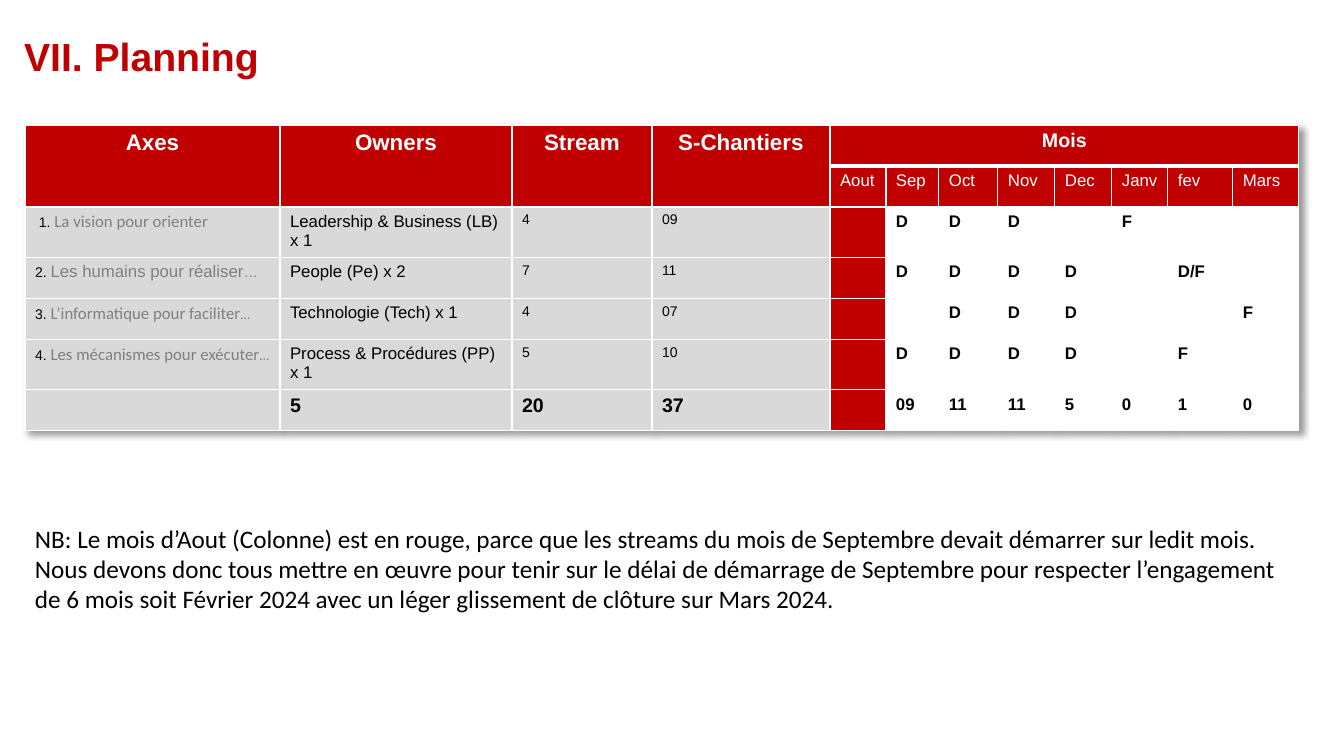
from lxml import etree
from pptx import Presentation
from pptx.dml.color import RGBColor
from pptx.enum.text import MSO_ANCHOR, MSO_AUTO_SIZE, PP_ALIGN
from pptx.oxml.ns import qn
from pptx.util import Emu, Pt

CENTER, LEFT = PP_ALIGN.CENTER, PP_ALIGN.LEFT
MIDDLE = MSO_ANCHOR.MIDDLE
GROW = MSO_AUTO_SIZE.SHAPE_TO_FIT_TEXT
EMU_PER_INCH, PX_PER_INCH = 914400, 100.8
RED, GRAY, WHITE, BLACK, MUTED = "C00000", "D9D9D9", "FFFFFF", "000000", "808080"

COLUMN_WIDTHS = [255, 232, 140, 178, 56, 53, 59, 57, 57, 56, 65, 66]
ROW_HEIGHT, ROW_COUNT = 41, 7
HEADINGS = ["Axes", "Owners", "Stream", "S-Chantiers"]
MONTHS = ["Aout", "Sep", "Oct", "Nov", "Dec", "Janv", "fev", "Mars"]
FIRST_MONTH = len(HEADINGS)
AXES = [
    (" 1. ", "La vision pour orienter", "", "Calibri"),
    ("2. ", "Les humains pour réaliser", "…", "Arial"),
    ("3. ", "L’informatique pour faciliter", "…", "Calibri"),
    ("4. ", "Les mécanismes pour exécuter", "…", "Calibri"),
]
WORK = [
    ("Leadership & Business (LB) x 1", "4", "09"),
    ("People (Pe) x 2", "7", "11"),
    ("Technologie (Tech) x 1", "4", "07"),
    ("Process & Procédures (PP) x 1", "5", "10"),
]
MILESTONES = [
    ["", "D", "D", "D", "", "F", "", ""],
    ["", "D", "D", "D", "D", "", "D/F", ""],
    ["", "", "D", "D", "D", "", "", "F"],
    ["", "D", "D", "D", "D", "", "F", ""],
]
WORK_TOTALS = ["", "5", "20", "37"]
MONTH_TOTALS = ["", "09", "11", "11", "5", "0", "1", "0"]
NOTE = (
    "NB: Le mois d’Aout (Colonne) est en rouge, parce que les streams du mois de "
    "Septembre devait démarrer sur ledit mois. Nous devons donc tous mettre en œuvre "
    "pour tenir sur le délai de démarrage de Septembre pour respecter l’engagement de "
    "6 mois soit Février 2024 avec un léger glissement de clôture sur Mars 2024."
)


def px(length):
    """Convert pixels to EMU."""
    return Emu(round(length * EMU_PER_INCH / PX_PER_INCH))


def color(value):
    """Turn a hex string into a colour."""
    return RGBColor.from_string(value)


def add_run(paragraph, text, size, ink=BLACK, bold=False, face="Arial"):
    """Append a formatted run."""
    run = paragraph.add_run()
    run.text = text
    for name, value in {"size": Pt(size), "bold": bold, "name": face}.items():
        setattr(run.font, name, value)
    run.font.color.rgb = color(ink)


def place(shape, left, top, width, height):
    """Set the position and size of a shape in pixels."""
    box = {"left": left, "top": top, "width": width, "height": height}
    for name, value in box.items():
        setattr(shape, name, px(value))


def style_cell(cell, fill, bottom=1):
    """Fill a cell and give it white borders."""
    cell.fill.solid()
    cell.fill.fore_color.rgb = color(fill)
    properties = cell._tc.get_or_add_tcPr()
    borders = {"a:lnL": 1, "a:lnR": 1, "a:lnT": 1, "a:lnB": bottom}
    for index, (tag, width) in enumerate(borders.items()):
        line = etree.Element(qn(tag), w=str(Pt(width)))
        paint = etree.SubElement(line, qn("a:solidFill"))
        etree.SubElement(paint, qn("a:srgbClr"), val=WHITE)
        properties.insert(index, line)


def write(cell, text, size, ink=BLACK, bold=False, align=LEFT):
    """Write one run into a cell."""
    paragraph = cell.text_frame.paragraphs[0]
    paragraph.alignment = align
    if text:
        add_run(paragraph, text, size, ink, bold)


def add_table_shadow(table):
    """Give the table a soft shadow to the lower right."""
    effects = etree.Element(qn("a:effectLst"))
    shadow = etree.SubElement(effects, qn("a:outerShdw"), blurRad="50800",
                              dist="38100", dir="2700000", algn="tl")
    shade = etree.SubElement(shadow, qn("a:srgbClr"), val=BLACK)
    etree.SubElement(shade, qn("a:alpha"), val="40000")
    table._tbl.tblPr.insert(0, effects)


def style_grid(table):
    """Colour the header, the work columns and the months."""
    for row in range(ROW_COUNT):
        for column in range(len(COLUMN_WIDTHS)):
            if row < 2 or column == FIRST_MONTH:
                fill = RED
            else:
                fill = GRAY if column < FIRST_MONTH else WHITE
            thick = row == (1 if column < FIRST_MONTH else 0)
            style_cell(table.cell(row, column), fill, 3 if thick else 1)


def fill_header(table):
    """Merge and write the two header rows."""
    for column, heading in enumerate(HEADINGS):
        table.cell(0, column).merge(table.cell(1, column))
        write(table.cell(0, column), heading, 16, WHITE, True, CENTER)
    table.cell(0, FIRST_MONTH).merge(table.cell(0, len(COLUMN_WIDTHS) - 1))
    write(table.cell(0, FIRST_MONTH), "Mois", 14, WHITE, True, CENTER)
    for column, month in enumerate(MONTHS, FIRST_MONTH):
        write(table.cell(1, column), month, 12, WHITE)


def fill_body(table):
    """Write the axes with their work and milestones, then the totals."""
    for row, (axis, work) in enumerate(zip(AXES, WORK), 2):
        number, label, ending, face = axis
        paragraph = table.cell(row, 0).text_frame.paragraphs[0]
        add_run(paragraph, number, 10)
        add_run(paragraph, label, 12, MUTED, face=face)
        if ending:
            add_run(paragraph, ending, 10, MUTED, face=face)
        for column, text in enumerate(work, 1):
            write(table.cell(row, column), text, 12 if column == 1 else 10)
    for column, total in enumerate(WORK_TOTALS):
        write(table.cell(ROW_COUNT - 1, column), total, 14, bold=True)
    for row, marks in enumerate(MILESTONES + [MONTH_TOTALS], 2):
        for column, mark in enumerate(marks, FIRST_MONTH):
            write(table.cell(row, column), mark, 12, bold=True)


def add_planning(slide):
    """Add the planning table."""
    frame = slide.shapes.add_table(
        ROW_COUNT, len(COLUMN_WIDTHS), px(25), px(125),
        px(sum(COLUMN_WIDTHS)), px(ROW_COUNT * ROW_HEIGHT))
    table = frame.table
    for column, width in zip(table.columns, COLUMN_WIDTHS):
        column.width = px(width)
    for row in table.rows:
        row.height = px(ROW_HEIGHT)
    style_grid(table)
    fill_header(table)
    fill_body(table)
    add_table_shadow(table)


def add_title(slide):
    """Place and write the title."""
    title = slide.shapes.title
    place(title, 14, 32, 859, 53)
    frame = title.text_frame
    for name, value in {"vertical_anchor": MIDDLE, "auto_size": GROW,
                        "word_wrap": True}.items():
        setattr(frame, name, value)
    paragraph = frame.paragraphs[0]
    paragraph.alignment = LEFT
    paragraph.line_spacing = 0.9
    add_run(paragraph, "VII. Planning", 28, RED, True)


def add_note(slide):
    """Add the remark below the table."""
    note = slide.shapes.add_textbox(px(25), px(518), px(1274), px(102))
    note.text_frame.word_wrap = True
    note.text_frame.auto_size = GROW
    add_run(note.text_frame.paragraphs[0], NOTE, 18, face="Calibri")


def main():
    """Build and save the slide."""
    deck = Presentation()
    deck.slide_width, deck.slide_height = px(1344), px(756)
    slide = deck.slides.add_slide(deck.slide_layouts[5])
    add_title(slide)
    add_planning(slide)
    add_note(slide)
    deck.save("out.pptx")


if __name__ == "__main__":
    main()
